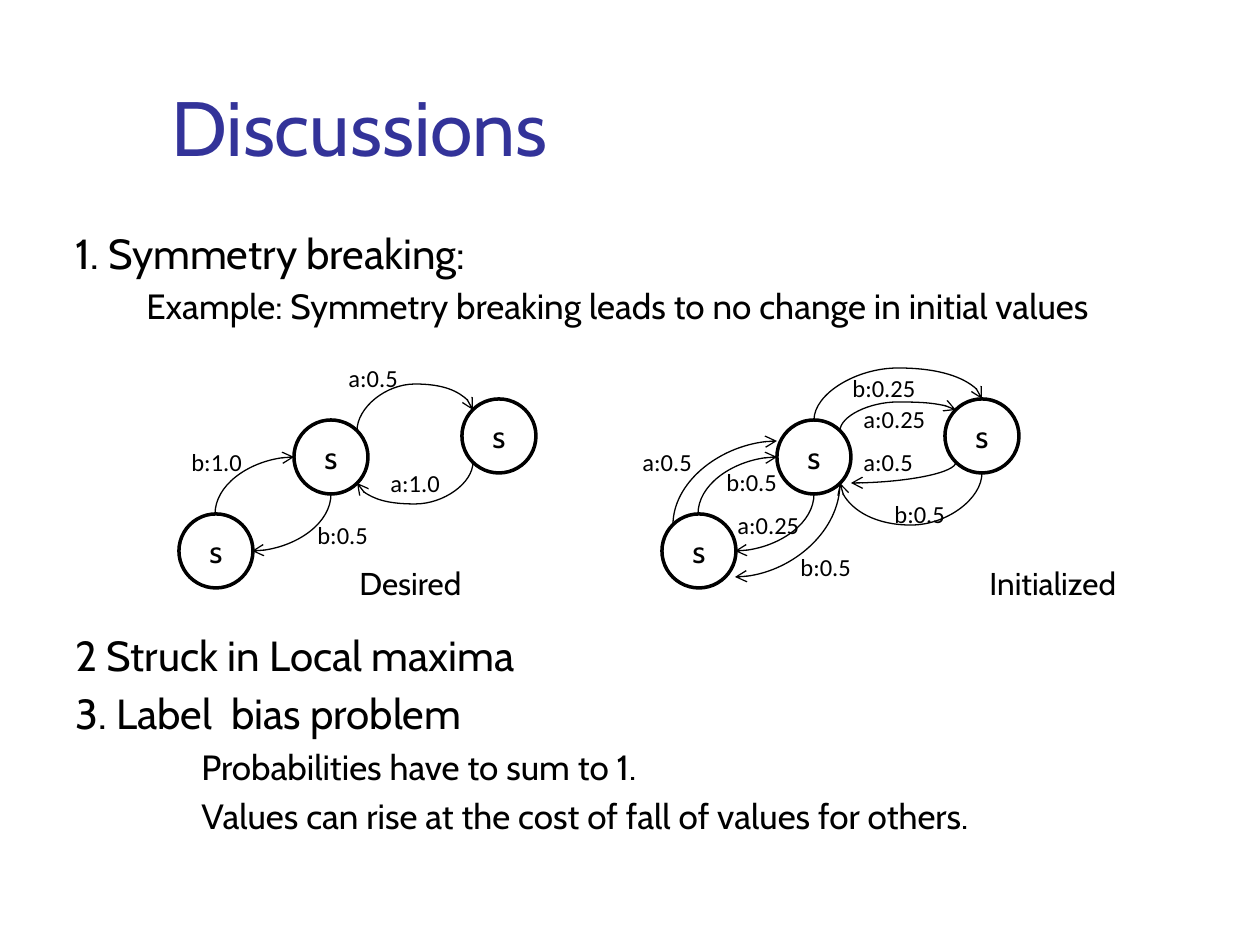
import pptx
import pptx.util
import pptx.dml.color
import pptx.enum.shapes
import pptx.enum.text
import pptx.oxml.ns
from lxml import etree

PX = pptx.util.Inches(1) // 126
COLORS = {"title": "333399", "ink": "000000", "node": "FFFFFF"}
qn = pptx.oxml.ns.qn

presentation = pptx.Presentation()
presentation.slide_width = 1260 * PX
presentation.slide_height = 945 * PX
slide = presentation.slides.add_slide(presentation.slide_layouts[6])
ink = pptx.dml.color.RGBColor.from_string(COLORS["ink"])


def add_text(left, top, width, height, lines, size, font="Cabin", color="ink"):
    shape = slide.shapes.add_textbox(left * PX, top * PX, width * PX, height * PX)
    frame = shape.text_frame
    frame.word_wrap = True
    frame.text = "\n".join(lines)
    for paragraph in frame.paragraphs:
        paragraph.font.name = font
        paragraph.font.size = pptx.util.Pt(size)
        paragraph.font.color.rgb = pptx.dml.color.RGBColor.from_string(COLORS[color])
    return frame


def add_curve(start_x, start_y, end_x, end_y, bend_y=None):
    width, height = abs(end_y - start_y), abs(end_x - start_x)
    left = (start_x + end_x - width) * PX // 2
    top = (start_y + end_y - height) * PX // 2
    curve = slide.shapes.add_connector(
        pptx.enum.shapes.MSO_CONNECTOR.CURVE,
        left, top, left + width * PX, top + height * PX)
    curve.line.color.rgb = ink
    curve.line.width = pptx.util.Pt(0.75)
    properties = curve._element.spPr
    transform = properties.find(qn("a:xfrm"))
    transform.set("rot", "5400000")
    if end_x > start_x:
        transform.set("flipH", "1")
        transform.set("flipV", "1")
    geometry = properties.find(qn("a:prstGeom"))
    if bend_y is None:
        geometry.set("prst", "curvedConnector2")
    else:
        adjustment = round((bend_y - start_y) / (end_y - start_y) * 100000)
        guide = etree.SubElement(geometry.find(qn("a:avLst")), qn("a:gd"))
        guide.set("name", "adj1")
        guide.set("fmla", f"val {adjustment}")
    etree.SubElement(properties.find(qn("a:ln")), qn("a:tailEnd")).set("type", "arrow")
    etree.SubElement(properties, qn("a:effectLst"))


title = add_text(159, 29, 1074, 149, ["Discussions"], 44, color="title")
title.vertical_anchor = pptx.enum.text.MSO_ANCHOR.BOTTOM

body_lines = [
    ("1. Symmetry breaking:", 24, 0, 4.8),
    ("Example: Symmetry breaking leads to no change in initial values", 20, 71, 4),
    ("2 Struck in Local maxima", 24, 0, 172.8),
    ("3. Label  bias problem", 24, 0, 4.8),
    ("Probabilities have to sum to 1.", 20, 126, 4),
    ("Values can rise at the cost of fall of values for others.", 20, 126, 4),
]
body = add_text(63, 221, 1134, 661, [line[0] for line in body_lines], 24)
for paragraph, (text, size, indent, gap) in zip(body.paragraphs, body_lines):
    paragraph.font.size = pptx.util.Pt(size)
    paragraph.space_before = pptx.util.Pt(gap)
    paragraph._p.get_or_add_pPr().set("marL", str(indent * PX))

for offset in (0, 483):
    for left, top in ((179, 514), (294, 420), (462, 399)):
        node = slide.shapes.add_shape(
            pptx.enum.shapes.MSO_SHAPE.OVAL,
            (left + offset) * PX, top * PX, 74 * PX, 74 * PX)
        node.shadow.inherit = False
        node.fill.solid()
        node.fill.fore_color.rgb = pptx.dml.color.RGBColor.from_string(COLORS["node"])
        node.line.color.rgb = ink
        node.line.width = pptx.util.Pt(2)
        frame = node.text_frame
        frame.margin_left = frame.margin_right = frame.margin_top = frame.margin_bottom = 0
        frame.text = "s"
        paragraph = frame.paragraphs[0]
        paragraph.alignment = pptx.enum.text.PP_ALIGN.CENTER
        paragraph.font.name = "Cabin"
        paragraph.font.size = pptx.util.Pt(18)
        paragraph.font.color.rgb = ink
    add_curve(215 + offset, 514, 294 + offset, 457)
    add_curve(331 + offset, 494, 252 + offset, 551)

for curve_points in (
    (357, 431, 473, 410, 384),
    (473, 462, 357, 483, 504),
    (840, 431, 956, 410, 402),
    (673, 525, 777, 441),
    (840, 483, 735, 577),
    (814, 420, 982, 399, 368),
    (982, 473, 840, 483, 525),
    (956, 462, 851, 483),
):
    add_curve(*curve_points)

for label, left, top in (
    ("b:1.0", 179, 441), ("b:0.5", 305, 514), ("a:0.5", 336, 357), ("a:1.0", 378, 462),
    ("a:0.5", 630, 441), ("b:0.5", 788, 546), ("a:0.25", 851, 398), ("a:0.5", 851, 441),
    ("b:0.5", 714, 461), ("a:0.25", 725, 504), ("b:0.25", 840, 367), ("b:0.5", 882, 493),
):
    add_text(left, top, 105, 43, [label], 14, "Calibri")

for caption, left, width in (("Desired", 347, 135), ("Initialized", 977, 158)):
    add_text(left, 558, width, 50, [caption], 18).word_wrap = False

presentation.save("out.pptx")
